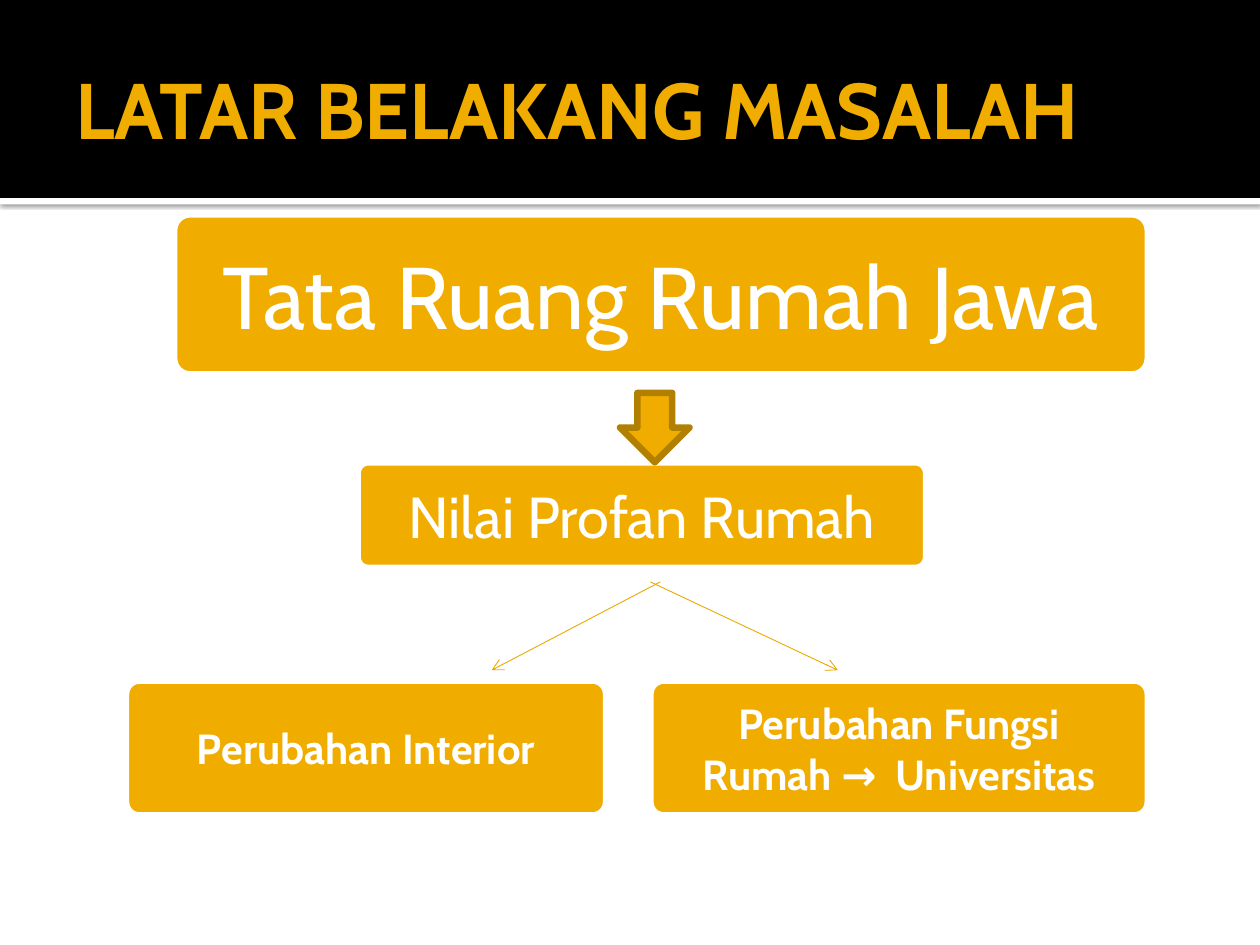
"""Build the background-of-the-problem slide on Javanese house layout."""
from lxml import etree
from pptx import Presentation
from pptx.dml.color import RGBColor
from pptx.enum.shapes import MSO_CONNECTOR, MSO_SHAPE
from pptx.enum.text import MSO_ANCHOR, PP_ALIGN
from pptx.oxml import parse_xml
from pptx.oxml.ns import nsdecls, qn
from pptx.util import Cm, Pt

RECTANGLE = MSO_SHAPE.RECTANGLE
ROUNDED = MSO_SHAPE.ROUNDED_RECTANGLE
DOWN_ARROW = MSO_SHAPE.DOWN_ARROW
STRAIGHT = MSO_CONNECTOR.STRAIGHT
MIDDLE = MSO_ANCHOR.MIDDLE
LEFT, CENTER = PP_ALIGN.LEFT, PP_ALIGN.CENTER

FONT = "Cabin"
COLORS = {
    "black": "000000",
    "white": "FFFFFF",
    "amber": "F0AD00",
    "dark_amber": "B28000",
    "branch": "EBA900",
}
TITLE_ONLY = 5
LOWER_TOP, LOWER_HEIGHT = 13.72, 2.72
BRANCH_TOP, BRANCH_BOTTOM = 11.73, 13.51


def color(name):
    """Return the named colour."""
    return RGBColor.from_string(COLORS[name])


def write_lines(frame, lines, size, color_name, bold, alignment):
    """Write each line as one paragraph with a single formatted run."""
    frame.word_wrap = True
    frame.vertical_anchor = MIDDLE
    for index, line in enumerate(lines):
        paragraph = frame.paragraphs[0] if index == 0 else frame.add_paragraph()
        paragraph.alignment = alignment
        run = paragraph.add_run()
        run.text = line
        run.font.name = FONT
        run.font.size = Pt(size)
        run.font.bold = bold
        run.font.color.rgb = color(color_name)


def add_filled(slide, preset, bounds, fill, line=None):
    """Add a flat preset shape with an optional thick outline."""
    shape = slide.shapes.add_shape(preset, *(Cm(value) for value in bounds))
    shape.shadow.inherit = False
    shape.fill.solid()
    shape.fill.fore_color.rgb = color(fill)
    if line:
        shape.line.color.rgb = color(line)
        shape.line.width = Pt(3.78)
    else:
        shape.line.fill.background()
    return shape


def add_header(slide):
    """Add the black band, its shadowed edge and the title above them."""
    edge = add_filled(slide, RECTANGLE, (0, 3.99, 25.4, 0.13), "white")
    band = add_filled(slide, RECTANGLE, (0, 0, 25.4, 3.99), "black")
    effects = edge._element.spPr.find(qn("a:effectLst"))
    effects.append(parse_xml(
        f'<a:outerShdw {nsdecls("a")} blurRad="{Pt(2.5)}" dist="{Pt(0.8)}" '
        f'dir="5400000" algn="t" rotWithShape="0"><a:srgbClr val="{COLORS["black"]}">'
        '<a:alpha val="60000"/></a:srgbClr></a:outerShdw>'))
    title = slide.shapes.title
    for shape in (edge, band):
        title._element.addprevious(shape._element)
    title.left, title.top = Cm(1.27), Cm(0.43)
    title.width, title.height = Cm(22.86), Cm(3.48)
    title.text_frame.margin_left = Cm(0.25)
    write_lines(title.text_frame, ["LATAR BELAKANG MASALAH"], 45, "amber", True, LEFT)


def add_box(slide, bounds, lines, size, bold=False):
    """Add a rounded amber box with centred white text."""
    box = add_filled(slide, ROUNDED, bounds, "amber", "white")
    box.adjustments[0] = 0.1
    write_lines(box.text_frame, lines, size, "white", bold, CENTER)


def add_branch(slide, start_x, end_x):
    """Add a thin arrow from the middle box towards a lower box."""
    branch = slide.shapes.add_connector(
        STRAIGHT, Cm(start_x), Cm(BRANCH_TOP), Cm(end_x), Cm(BRANCH_BOTTOM))
    branch.line.color.rgb = color("branch")
    branch.line.width = Pt(0.5)
    etree.SubElement(branch.line._get_or_add_ln(), qn("a:tailEnd"), type="arrow")
    etree.SubElement(branch._element.spPr, qn("a:effectLst"))


def main():
    """Build and save the slide."""
    presentation = Presentation()
    presentation.slide_width, presentation.slide_height = Cm(25.4), Cm(19.05)
    slide = presentation.slides.add_slide(presentation.slide_layouts[TITLE_ONLY])
    add_header(slide)
    add_box(slide, (3.51, 4.32, 19.63, 3.23), ["Tata Ruang Rumah Jawa"], 50)
    add_box(slide, (7.21, 9.32, 11.46, 2.13), ["Nilai Profan Rumah"], 33)
    add_box(slide, (2.54, LOWER_TOP, 9.68, LOWER_HEIGHT),
            ["Perubahan Interior"], 24, bold=True)
    add_box(slide, (13.11, LOWER_TOP, 10.03, LOWER_HEIGHT),
            ["Perubahan Fungsi", "Rumah →  Universitas"], 24, bold=True)
    add_branch(slide, 13.11, 16.89)
    add_branch(slide, 13.31, 9.91)
    add_filled(slide, DOWN_ARROW, (12.5, 7.92, 1.4, 1.4), "amber", "dark_amber")
    presentation.save("out.pptx")


if __name__ == "__main__":
    main()
